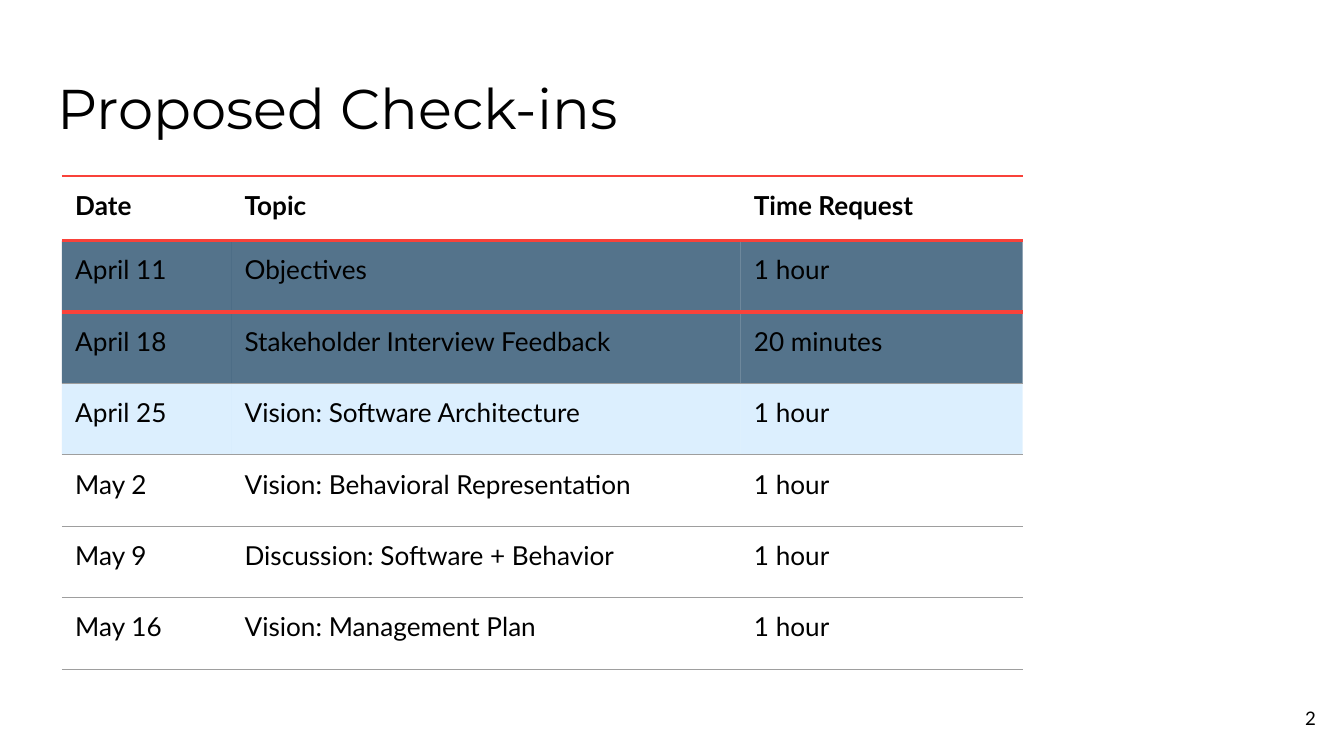
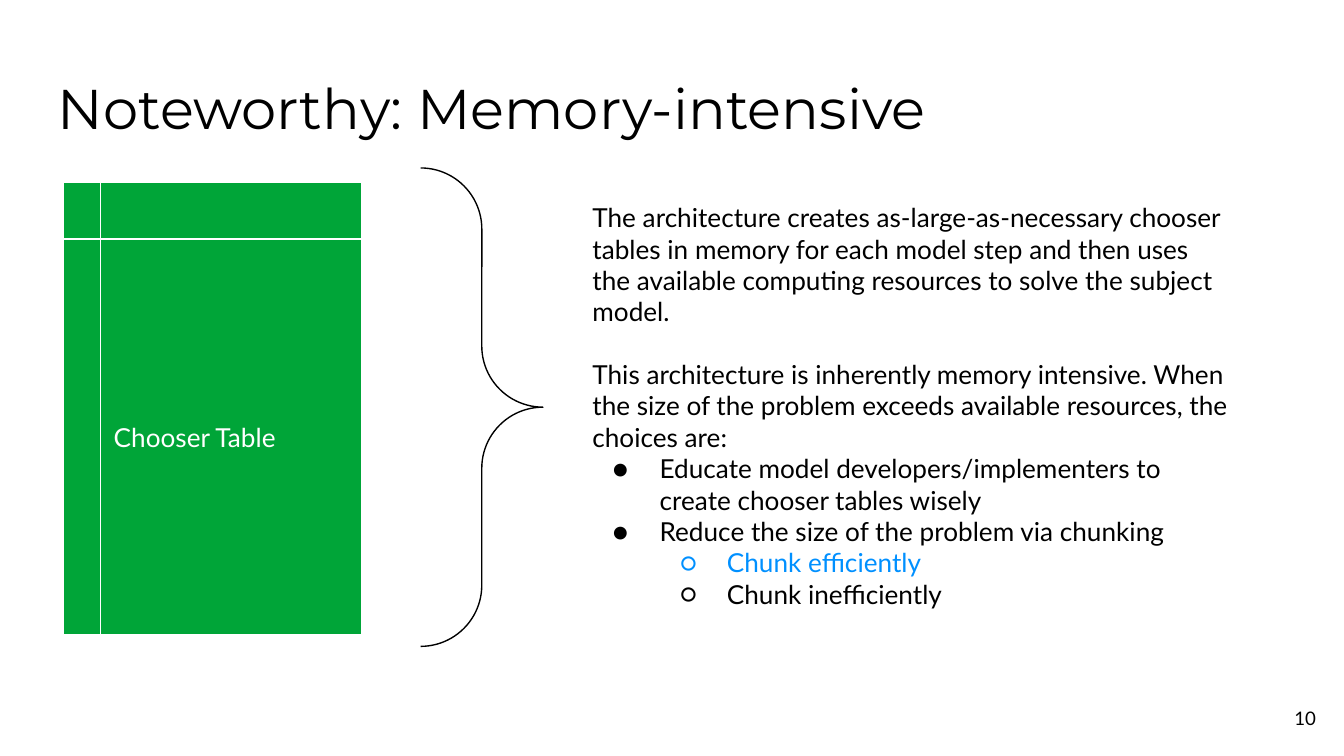
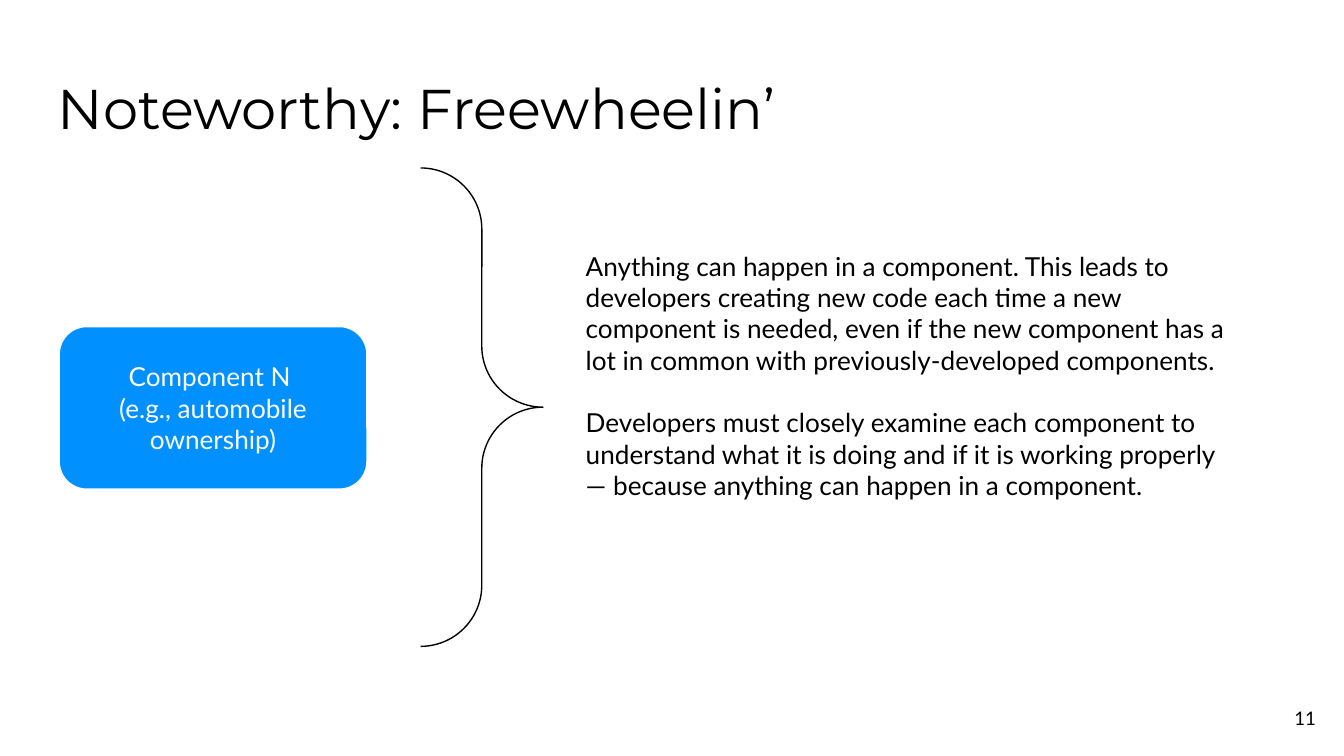
from dataclasses import dataclass

from lxml.etree import SubElement
from pptx import Presentation
from pptx.dml.color import RGBColor
from pptx.enum.shapes import MSO_SHAPE
from pptx.enum.text import MSO_ANCHOR, MSO_AUTO_SIZE, PP_ALIGN
from pptx.oxml.ns import qn
from pptx.presentation import Presentation as Deck
from pptx.shapes.autoshape import Shape
from pptx.slide import Slide
from pptx.table import _Cell as Cell
from pptx.text.text import TextFrame
from pptx.util import Inches, Pt

BLACK = RGBColor(0x00, 0x00, 0x00)
WHITE = RGBColor(0xFF, 0xFF, 0xFF)
RED = RGBColor(0xF9, 0x42, 0x3A)
GREY = RGBColor(0x9E, 0x9E, 0x9E)
NAVY = RGBColor(0x00, 0x2F, 0x53)
SKY = RGBColor(0x91, 0xCE, 0xFD)
BLUE = RGBColor(0x00, 0x90, 0xFF)
GREEN = RGBColor(0x00, 0xA5, 0x38)

WIDTH = Inches(10)
HEIGHT = WIDTH * 9 // 16
HEAD_FONT = "Montserrat"
BODY_FONT = "Lato"
INSET = Inches(0.1)
HANG = Inches(0.35)
GAP = Pt(16.8)  # one line of body text
BULLETS = {1: "●", 2: "○"}


@dataclass(frozen=True)
class Box:
    left: float
    top: float
    width: float
    height: float

    def place(self) -> tuple[int, int, int, int]:
        return (Inches(self.left), Inches(self.top),
                Inches(self.width), Inches(self.height))


@dataclass(frozen=True)
class Para:
    text: str
    level: int = 0  # 0 is plain, 1 and 2 are bulleted
    gap: bool = False
    color: RGBColor | None = None


@dataclass(frozen=True)
class Rule:
    """A horizontal table border."""
    color: RGBColor
    width: float


@dataclass(frozen=True)
class Row:
    cells: tuple[str, str, str]
    top: Rule
    bottom: Rule
    fill: RGBColor | None = None
    alpha: int = 100
    bold: bool = False


TITLE = Box(0.33, 0.45, 9.32, 0.7)
NUMBER = Box(9.29, 5.13, 0.6, 0.43)
BRACE = Box(3.13, 1.25, 0.91, 3.56)

THIN = Rule(GREY, 0.75)
FIRM = Rule(RED, 1.5)
THICK = Rule(RED, 2.25)

TABLE = Box(0.46, 1.31, 7.15, 3.67)
COLUMNS = (1.26, 3.79, 2.1)
ROWS = (
    Row(("Date", "Topic", "Time Request"), FIRM, FIRM, bold=True),
    Row(("April 11", "Objectives", "1 hour"), FIRM, THICK, NAVY, 67),
    Row(("April 18", "Stakeholder Interview Feedback", "20 minutes"),
        THICK, THIN, NAVY, 67),
    Row(("April 25", "Vision: Software Architecture", "1 hour"),
        THIN, THIN, SKY, 31),
    Row(("May 2", "Vision: Behavioral Representation", "1 hour"), THIN, THIN),
    Row(("May 9", "Discussion: Software + Behavior", "1 hour"), THIN, THIN),
    Row(("May 16", "Vision: Management Plan", "1 hour"), THIN, THIN),
)
HEAD_ROW = 0.48
BODY_ROW = (TABLE.height - HEAD_ROW) / (len(ROWS) - 1)

MEMORY = (
    Para("The architecture creates as-large-as-necessary chooser tables in "
         "memory for each model step and then uses the available computing "
         "resources to solve the subject model."),
    Para("This architecture is inherently memory intensive. When the size of "
         "the problem exceeds available resources, the choices are:", gap=True),
    Para("Educate model developers/implementers to create chooser tables "
         "wisely", 1),
    Para("Reduce the size of the problem via chunking", 1),
    Para("Chunk efficiently", 2, color=BLUE),
    Para("Chunk inefficiently", 2),
)
FREEDOM = (
    Para("Anything can happen in a component. This leads to developers "
         "creating new code each time a new component is needed, even if the "
         "new component has a lot in common with previously-developed "
         "components."),
    Para("Developers must closely examine each component to understand what "
         "it is doing and if it is working properly — because anything can "
         "happen in a component.", gap=True),
)


def add_bullet(para, level: int, color: RGBColor) -> None:
    props = para._p.get_or_add_pPr()
    props.set("marL", str(Inches(0.5 * level)))
    props.set("indent", str(-HANG))
    tint = SubElement(props, qn("a:buClr"))
    SubElement(tint, qn("a:srgbClr"), val=str(color))
    SubElement(props, qn("a:buFont"), typeface=BODY_FONT)
    SubElement(props, qn("a:buChar"), char=BULLETS[level])


def write(frame: TextFrame, *paras: Para, size: float = 14,
          font: str = BODY_FONT, color: RGBColor = BLACK,
          align: PP_ALIGN = PP_ALIGN.LEFT,
          anchor: MSO_ANCHOR = MSO_ANCHOR.TOP) -> None:
    frame.word_wrap = True
    frame.vertical_anchor = anchor
    frame.margin_left = frame.margin_right = INSET
    frame.margin_top = frame.margin_bottom = INSET
    for pos, item in enumerate(paras):
        para = frame.add_paragraph() if pos else frame.paragraphs[0]
        para.alignment = align
        para.space_before = GAP if item.gap else Pt(0)
        tone = item.color or color
        if item.level:
            para.level = item.level - 1
            add_bullet(para, item.level, tone)
        run = para.add_run()
        run.text = item.text
        run.font.name = font
        run.font.size = Pt(size)
        run.font.color.rgb = tone


def add_text(slide: Slide, box: Box, *paras: Para, **style) -> None:
    write(slide.shapes.add_textbox(*box.place()).text_frame, *paras, **style)


def add_shape(slide: Slide, kind: MSO_SHAPE, box: Box, line: RGBColor,
              fill: RGBColor | None = None) -> Shape:
    shape = slide.shapes.add_shape(kind, *box.place())
    shape.shadow.inherit = False
    shape.line.color.rgb = line
    shape.line.width = Pt(0.75)
    if fill is None:
        shape.fill.background()
    else:
        shape.fill.solid()
        shape.fill.fore_color.rgb = fill
    return shape


def add_brace(slide: Slide) -> None:
    brace = add_shape(slide, MSO_SHAPE.RIGHT_BRACE, BRACE, BLACK)
    brace.adjustments[0] = brace.adjustments[1] = 0.5


def add_slide(deck: Deck, title: str, number: int) -> Slide:
    """Add a slide with its title and page number."""
    slide = deck.slides.add_slide(deck.slide_layouts[5])
    head = slide.shapes.title
    head.left, head.top, head.width, head.height = TITLE.place()
    head.text_frame.auto_size = MSO_AUTO_SIZE.NONE
    write(head.text_frame, Para(title), size=30, font=HEAD_FONT)
    add_text(slide, NUMBER, Para(str(number)), size=10,
             align=PP_ALIGN.RIGHT, anchor=MSO_ANCHOR.MIDDLE)
    return slide


def set_rules(cell: Cell, top: Rule, bottom: Rule) -> None:
    props = cell._tc.get_or_add_tcPr()
    for side in ("L", "R"):
        edge = SubElement(props, qn(f"a:ln{side}"), w="0")
        SubElement(edge, qn("a:noFill"))
    for side, rule in (("T", top), ("B", bottom)):
        edge = SubElement(props, qn(f"a:ln{side}"), w=str(Pt(rule.width)))
        solid = SubElement(edge, qn("a:solidFill"))
        SubElement(solid, qn("a:srgbClr"), val=str(rule.color))


def set_fill(cell: Cell, color: RGBColor | None, alpha: int) -> None:
    if color is None:
        cell.fill.background()
        return
    cell.fill.solid()
    cell.fill.fore_color.rgb = color
    tint = cell._tc.tcPr.find(f"{qn('a:solidFill')}/{qn('a:srgbClr')}")
    SubElement(tint, qn("a:alpha"), val=str(alpha * 1000))


def write_cell(cell: Cell, text: str, bold: bool) -> None:
    cell.margin_left = cell.margin_right = INSET
    cell.margin_top = cell.margin_bottom = INSET
    cell.vertical_anchor = MSO_ANCHOR.TOP
    para = cell.text_frame.paragraphs[0]
    para.text = text
    font = para.runs[0].font
    font.name, font.size, font.bold = BODY_FONT, Pt(14), bold
    font.color.rgb = BLACK


def add_dates(slide: Slide) -> None:
    table = slide.shapes.add_table(len(ROWS), len(COLUMNS),
                                   *TABLE.place()).table
    table.first_row = table.horz_banding = False
    for column, width in zip(table.columns, COLUMNS):
        column.width = Inches(width)
    for pos, (line, row) in enumerate(zip(table.rows, ROWS)):
        line.height = Inches(BODY_ROW if pos else HEAD_ROW)
        for cell, text in zip(line.cells, row.cells):
            write_cell(cell, text, row.bold)
            set_rules(cell, row.top, row.bottom)
            set_fill(cell, row.fill, row.alpha)


def add_memory(slide: Slide) -> None:
    store = add_shape(slide, MSO_SHAPE.FLOWCHART_INTERNAL_STORAGE,
                      Box(0.47, 1.36, 2.22, 3.36), WHITE, GREEN)
    write(store.text_frame, Para("Chooser Table"), color=WHITE,
          anchor=MSO_ANCHOR.MIDDLE)
    add_brace(slide)
    add_text(slide, Box(4.31, 1.4, 4.96, 3.27), *MEMORY)


def add_freedom(slide: Slide) -> None:
    add_brace(slide)
    add_text(slide, Box(4.26, 1.76, 4.96, 2.56), *FREEDOM)
    part = add_shape(slide, MSO_SHAPE.ROUNDED_RECTANGLE,
                     Box(0.44, 2.43, 2.29, 1.21), WHITE, BLUE)
    part.adjustments[0] = 0.17
    write(part.text_frame, Para("Component N "),
          Para("(e.g., automobile ownership)"), color=WHITE,
          align=PP_ALIGN.CENTER, anchor=MSO_ANCHOR.MIDDLE)


def main() -> None:
    deck = Presentation()
    deck.slide_width, deck.slide_height = WIDTH, HEIGHT
    add_dates(add_slide(deck, "Proposed Check-ins", 2))
    add_memory(add_slide(deck, "Noteworthy: Memory-intensive", 10))
    add_freedom(add_slide(deck, "Noteworthy: Freewheelin’", 11))
    deck.save("out.pptx")


if __name__ == "__main__":
    main()
